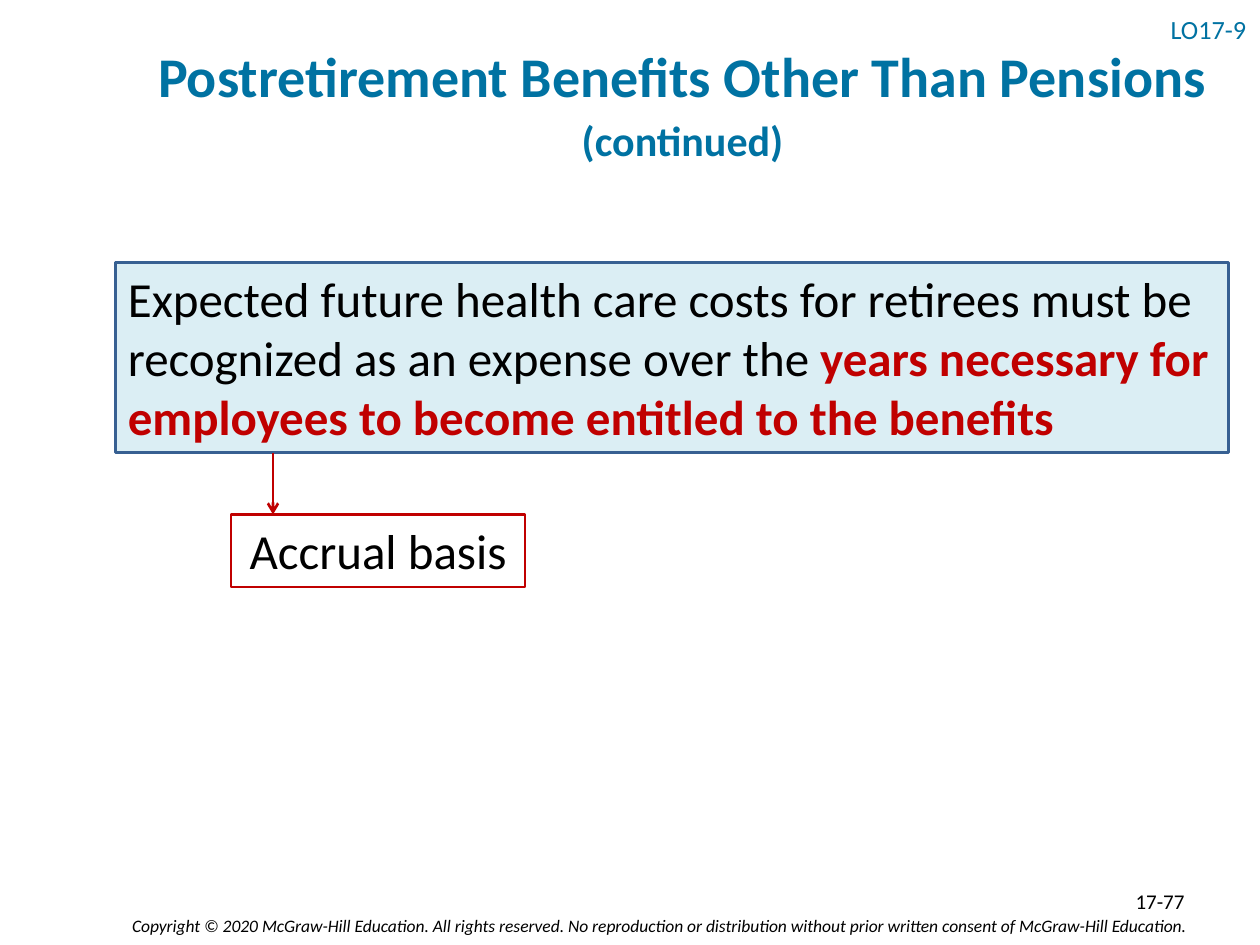
"""Build the slide on expensing postretirement benefits other than pensions."""
from dataclasses import dataclass

from lxml.etree import SubElement
from pptx import Presentation
from pptx.dml.color import RGBColor
from pptx.enum.shapes import MSO_CONNECTOR, MSO_SHAPE
from pptx.enum.text import MSO_ANCHOR, PP_ALIGN
from pptx.oxml.ns import qn
from pptx.util import Inches, Pt


@dataclass(frozen=True)
class Theme:
    font: str = "Calibri"
    heading: str = "0072A2"
    ink: str = "000000"
    accent: str = "C00000"
    panel: str = "DBEEF4"
    panel_edge: str = "376092"
    title_size: int = 32
    body_size: int = 28
    subtitle_size: int = 24
    objective_size: int = 15
    number_size: int = 12
    copyright_size: int = 10
    stroke: float = 1.5


theme = Theme()
deck = Presentation()
deck.slide_width, deck.slide_height = Inches(10), Inches(7.5)
slide = deck.slides.add_slide(deck.slide_layouts[6])
column = deck.slide_width / 120
row = deck.slide_height / 90


def add_text(text, *, at, size, color=theme.ink, bold=False, italic=False,
             align=PP_ALIGN.LEFT, anchor=MSO_ANCHOR.TOP, spacing=1.0,
             fill=None, edge=None, ending="", ending_format=None):
    left, top, width, height = at
    box = slide.shapes.add_shape(
        MSO_SHAPE.RECTANGLE, round(left * column), round(top * row),
        round(width * column), round(height * row))
    box.shadow.inherit = False
    if fill:
        box.fill.solid()
        box.fill.fore_color.rgb = RGBColor.from_string(fill)
    else:
        box.fill.background()
    if edge:
        box.line.color.rgb = RGBColor.from_string(edge)
        box.line.width = Pt(theme.stroke)
    else:
        box.line.fill.background()
    frame = box.text_frame
    frame.word_wrap = True
    frame.vertical_anchor = anchor
    paragraph = frame.paragraphs[0]
    paragraph.alignment = align
    paragraph.line_spacing = spacing
    base = {"size": size, "color": color, "bold": bold}
    for part, style in ((text, base), (ending, base | (ending_format or {}))):
        if part:
            run = paragraph.add_run()
            run.text = part
            run.font.name = theme.font
            run.font.size = Pt(style["size"])
            run.font.bold = style["bold"]
            run.font.italic = italic
            run.font.color.rgb = RGBColor.from_string(style["color"])


add_text("Copyright © 2020 McGraw-Hill Education. All rights reserved. "
         "No reproduction or distribution without prior written consent "
         "of McGraw-Hill Education. ",
         at=(5.4, 86.6, 109.1, 3.2), size=theme.copyright_size,
         italic=True, align=PP_ALIGN.RIGHT)
add_text("Postretirement Benefits Other Than Pensions ",
         at=(10, 0, 110, 19), size=theme.title_size, color=theme.heading,
         bold=True, align=PP_ALIGN.CENTER, anchor=MSO_ANCHOR.MIDDLE,
         spacing=1.1, ending="(continued)",
         ending_format={"size": theme.subtitle_size})
add_text("LO17-9", at=(110.3, 0.6, 9.7, 4.8), size=theme.objective_size,
         color=theme.heading, anchor=MSO_ANCHOR.MIDDLE, spacing=0.9)

rule_top, rule_height, basis_top = 25, 18.1, 49
add_text("Expected future health care costs for retirees must be "
         "recognized as an expense over the ",
         at=(11, rule_top, 106, rule_height), size=theme.body_size,
         fill=theme.panel, edge=theme.panel_edge,
         ending="years necessary for employees to become entitled "
                "to the benefits",
         ending_format={"color": theme.accent, "bold": True})
add_text("Accrual basis", at=(22, basis_top, 28, 6.9), size=theme.body_size,
         align=PP_ALIGN.CENTER, edge=theme.accent)

basis_arrow = slide.shapes.add_connector(
    MSO_CONNECTOR.STRAIGHT,
    round(26 * column), round((rule_top + rule_height) * row),
    round(26 * column), round(basis_top * row))
basis_arrow.line.color.rgb = RGBColor.from_string(theme.accent)
basis_arrow.line.width = Pt(theme.stroke)
SubElement(basis_arrow.line._get_or_add_ln(), qn("a:tailEnd"), type="arrow")
SubElement(basis_arrow._element.spPr, qn("a:effectLst"))

add_text("17-77", at=(86, 83.4, 28, 4.8), size=theme.number_size,
         align=PP_ALIGN.RIGHT, anchor=MSO_ANCHOR.MIDDLE)

deck.save("out.pptx")
